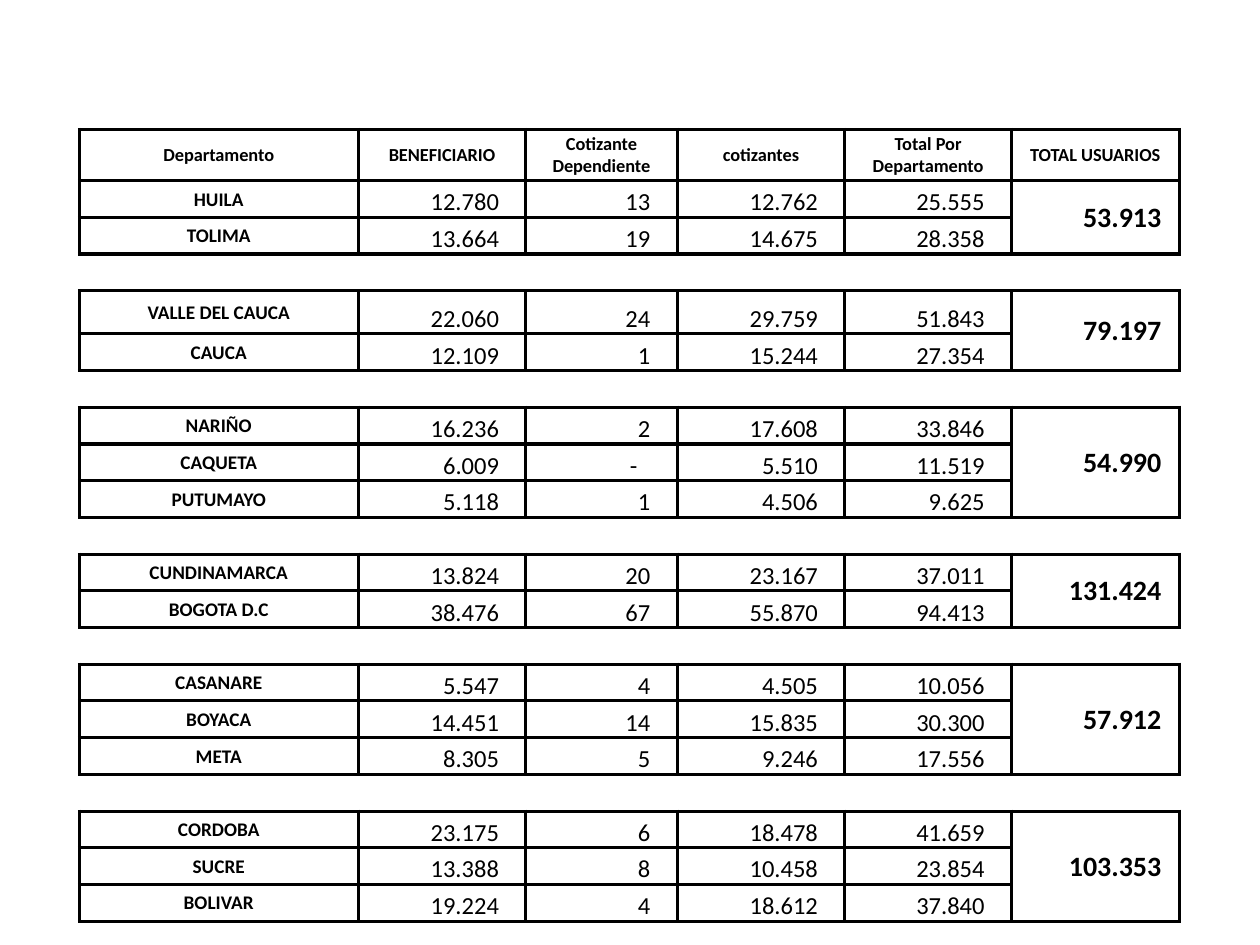
from dataclasses import dataclass

from lxml.etree import SubElement
from pptx import Presentation
from pptx.dml.color import RGBColor
from pptx.enum.text import MSO_ANCHOR, PP_ALIGN
from pptx.oxml import parse_xml
from pptx.oxml.ns import nsdecls, qn
from pptx.table import Table, _Cell
from pptx.util import Cm, Pt


@dataclass(frozen=True)
class Theme:
    font: str = "Calibri"
    ink: str = "000000"
    border: float = 2
    header_size: float = 10.5
    label_size: float = 11
    value_size: float = 14
    total_size: float = 16


@dataclass(frozen=True)
class Department:
    name: str
    beneficiaries: int
    dependents: int
    contributors: int

    @property
    def total(self) -> int:
        return self.beneficiaries + self.dependents + self.contributors


THEME = Theme()
HEADERS = ("Departamento", "BENEFICIARIO", "Cotizante Dependiente",
           "cotizantes", "Total Por Departamento", "TOTAL USUARIOS")
REGIONS = (
    (Department("HUILA", 12780, 13, 12762),
     Department("TOLIMA", 13664, 19, 14675)),
    (Department("VALLE DEL CAUCA", 22060, 24, 29759),
     Department("CAUCA", 12109, 1, 15244)),
    (Department("NARIÑO", 16236, 2, 17608),
     Department("CAQUETA", 6009, 0, 5510),
     Department("PUTUMAYO", 5118, 1, 4506)),
    (Department("CUNDINAMARCA", 13824, 20, 23167),
     Department("BOGOTA D.C", 38476, 67, 55870)),
    (Department("CASANARE", 5547, 4, 4505),
     Department("BOYACA", 14451, 14, 15835),
     Department("META", 8305, 5, 9246)),
    (Department("CORDOBA", 23175, 6, 18478),
     Department("SUCRE", 13388, 8, 10458),
     Department("BOLIVAR", 19224, 4, 18612)),
)
COLUMN_WIDTHS = (5.62, 3.38, 3.05, 3.38, 3.36, 3.38)
HEADER_HEIGHT, ROW_HEIGHT, VALLE_HEIGHT = 1.03, 0.74, 0.87
VALLE_ROW = 4
CELL_INSET, VALUE_INSET, DASH_INSET, TOTAL_INSET = 0.02, 0.54, 0.8, 0.36
PLAIN_STYLE = "{2D5ABB26-0587-4C30-8999-92F81FD0307C}"


def set_borders(cell: _Cell, sides: str) -> None:
    """Rule the given sides (from "LRTB") and leave the others open."""
    properties = cell._tc.get_or_add_tcPr()
    for position, side in enumerate("LRTB"):
        paint = (f'<a:solidFill><a:srgbClr val="{THEME.ink}"/></a:solidFill>'
                 if side in sides else "<a:noFill/>")
        properties.insert(position, parse_xml(
            f'<a:ln{side} {nsdecls("a")} w="{Pt(THEME.border)}">{paint}</a:ln{side}>'))


def prepare_cell(cell: _Cell, sides: str) -> None:
    cell.margin_left = cell.margin_right = cell.margin_top = Cm(CELL_INSET)
    cell.margin_bottom = 0
    cell.fill.background()
    set_borders(cell, sides)


def write_cell(cell: _Cell, text: str, size: float, bold: bool = True,
               anchor: MSO_ANCHOR = MSO_ANCHOR.MIDDLE,
               right_inset: float = 0) -> None:
    """Centre the text, or set it right when a right inset is given."""
    cell.text_frame.text = text
    cell.vertical_anchor = anchor
    para = cell.text_frame.paragraphs[0]
    para.alignment = PP_ALIGN.RIGHT if right_inset else PP_ALIGN.CENTER
    if right_inset:
        cell.margin_right = Cm(right_inset)
    font = para.runs[0].font
    font.name, font.size, font.bold = THEME.font, Pt(size), bold
    font.color.rgb = RGBColor.from_string(THEME.ink)


def format_number(number: int) -> str:
    return f"{number:,}".replace(",", ".") if number else "-"


def write_department(table: Table, row: int, department: Department) -> None:
    write_cell(table.cell(row, 0), department.name, THEME.label_size)
    values = (department.beneficiaries, department.dependents,
              department.contributors, department.total)
    for column, value in enumerate(values, start=1):
        write_cell(table.cell(row, column), format_number(value),
                   THEME.value_size, False, MSO_ANCHOR.BOTTOM,
                   VALUE_INSET if value else DASH_INSET)


def write_gap(table: Table, row: int) -> None:
    for cell in table.rows[row].cells:
        prepare_cell(cell, "TB")
        para = cell.text_frame.paragraphs[0]
        SubElement(para._p, qn("a:endParaRPr"), sz=str(THEME.label_size * 100))


def main() -> None:
    deck = Presentation()
    deck.slide_width, deck.slide_height = Cm(25.4), Cm(19.05)
    page = deck.slides.add_slide(deck.slide_layouts[6])

    # Table grid: header, departments, one gap between regions
    row_count = sum(len(region) + 1 for region in REGIONS)
    heights = [HEADER_HEIGHT] + [ROW_HEIGHT] * (row_count - 1)
    heights[VALLE_ROW] = VALLE_HEIGHT
    frame = page.shapes.add_table(
        row_count, len(HEADERS), Cm(1.6), Cm(2.61),
        Cm(sum(COLUMN_WIDTHS)), Cm(sum(heights)))
    table = frame.table
    table.first_row = table.horz_banding = False
    table._tbl.tblPr.find(qn("a:tableStyleId")).text = PLAIN_STYLE
    for column, width in zip(table.columns, COLUMN_WIDTHS):
        column.width = Cm(width)
    for row, height in zip(table.rows, heights):
        row.height = Cm(height)

    # Header
    for cell, header in zip(table.rows[0].cells, HEADERS):
        prepare_cell(cell, "LRTB")
        write_cell(cell, header, THEME.header_size)

    # Regions, each with a merged total
    first = 1
    last_column = len(HEADERS) - 1
    for region in REGIONS:
        if first > 1:
            write_gap(table, first)
            first += 1
        for row, department in enumerate(region, start=first):
            for cell in table.rows[row].cells:
                prepare_cell(cell, "LRTB")
            write_department(table, row, department)
        total_cell = table.cell(first, last_column)
        total_cell.merge(table.cell(first + len(region) - 1, last_column))
        total = sum(department.total for department in region)
        write_cell(total_cell, format_number(total), THEME.total_size,
                   right_inset=TOTAL_INSET)
        first += len(region)

    deck.save("out.pptx")


if __name__ == "__main__":
    main()
